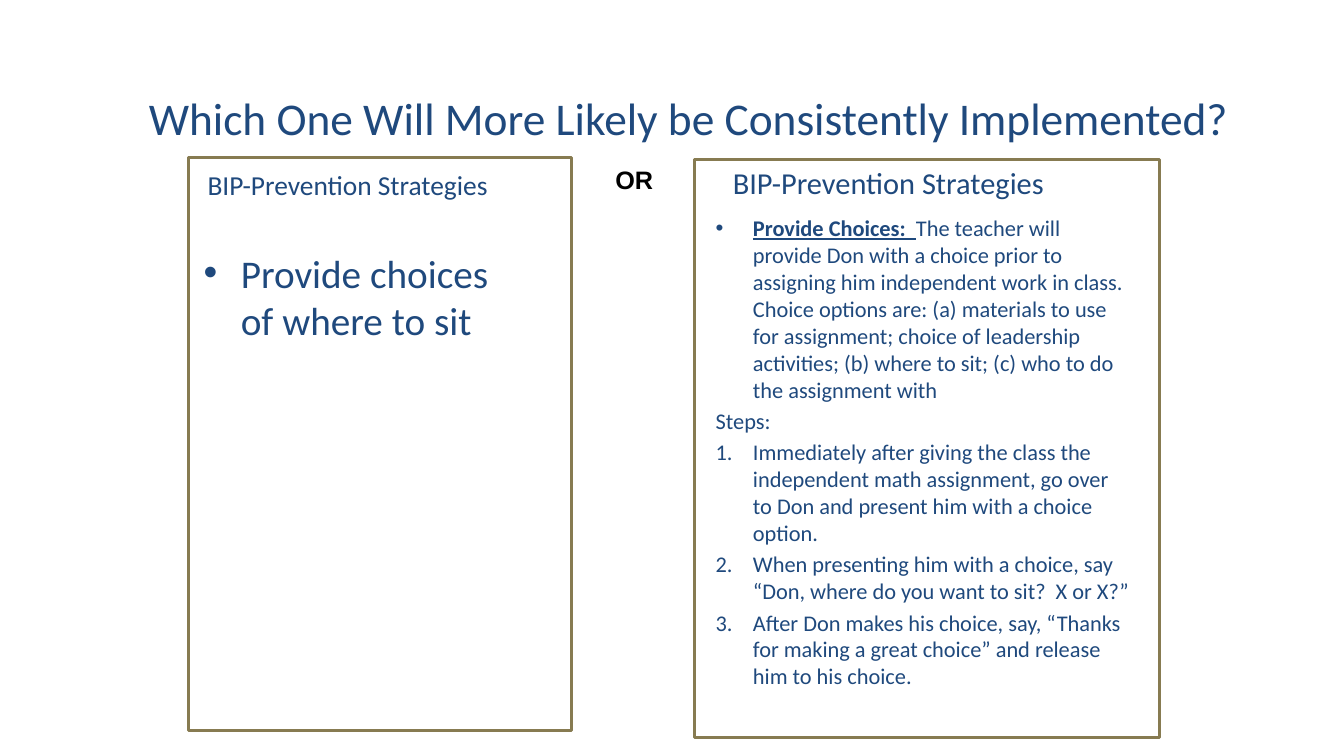
"""Build a slide comparing a vague and a detailed prevention strategy."""
from dataclasses import dataclass

from lxml.etree import SubElement
from pptx import Presentation
from pptx.dml.color import RGBColor as Color
from pptx.enum.shapes import MSO_SHAPE as Shape
from pptx.enum.text import MSO_ANCHOR as Anchor, PP_ALIGN as Align
from pptx.oxml.ns import qn
from pptx.util import Inches, Pt


@dataclass(frozen=True)
class Theme:
    """Colours, fonts and type sizes of the slide."""
    navy: Color = Color(0x1F, 0x49, 0x7D)
    black: Color = Color(0, 0, 0)
    frame: Color = Color(0x87, 0x7B, 0x51)
    body_font: str = "Calibri"
    label_font: str = "Arial"
    title_size: float = 32.4
    short_size: float = 28
    detail_size: float = 16
    short_heading_size: float = 19.6
    detail_heading_size: float = 21.7
    label_size: float = 18
    frame_width: float = 2
    indent: float = 0.37
    space_ratio: float = 0.2


class SlideBuilder:
    """Draws styled elements on one slide."""

    def __init__(self, slide, theme):
        """Keep the slide and its theme."""
        self.slide = slide
        self.theme = theme

    def frame(self, *box):
        """Draw an unfilled outlined rectangle."""
        shape = self.slide.shapes.add_shape(Shape.RECTANGLE, *map(Inches, box))
        shape.shadow.inherit = False
        shape.fill.background()
        shape.line.color.rgb = self.theme.frame
        shape.line.width = Pt(self.theme.frame_width)

    def text_frame(self, box, anchor=Anchor.TOP):
        """Add an empty wrapping text box and return its text frame."""
        frame = self.slide.shapes.add_textbox(*map(Inches, box)).text_frame
        frame.word_wrap = True
        frame.vertical_anchor = anchor
        return frame

    def run(self, paragraph, text, size, color=None, font=None, bold=False, underline=False):
        """Append one styled run."""
        run = paragraph.add_run()
        run.text = text
        run.font.name = font or self.theme.body_font
        run.font.size = Pt(size)
        run.font.color.rgb = color or self.theme.navy
        run.font.bold = bold
        run.font.underline = underline

    def line(self, box, text, size, align=Align.LEFT, anchor=Anchor.TOP, **style):
        """Add a text box with a single paragraph."""
        paragraph = self.text_frame(box, anchor).paragraphs[0]
        paragraph.alignment = align
        self.run(paragraph, text, size, **style)

    def marker(self, paragraph, kind):
        """Set the hanging indent and the bullet or number."""
        properties = paragraph._p.get_or_add_pPr()
        indent = Inches(self.theme.indent)
        properties.set("marL", str(indent))
        properties.set("indent", str(-indent))
        if kind == "bullet":
            SubElement(properties, qn("a:buFont"), typeface=self.theme.label_font)
            SubElement(properties, qn("a:buChar"), char="•")
        elif kind == "number":
            SubElement(properties, qn("a:buAutoNum"), type="arabicPeriod")
        else:
            SubElement(properties, qn("a:buNone"))

    def listing(self, box, size, items):
        """Add a list of (marker kind, bold lead, text) items."""
        frame = self.text_frame(box)
        for index, (kind, lead, text) in enumerate(items):
            paragraph = frame.add_paragraph() if index else frame.paragraphs[0]
            paragraph.space_before = Pt(size * self.theme.space_ratio)
            self.marker(paragraph, kind)
            if lead:
                self.run(paragraph, lead, size, bold=True, underline=True)
            self.run(paragraph, text, size)


SHORT_STRATEGY = [("bullet", "", "Provide choices of where to sit")]
DETAILED_STRATEGY = [
    ("bullet", "Provide Choices:  ",
     "The teacher will provide Don with a choice prior to assigning him independent "
     "work in class.  Choice options are: (a) materials to use for assignment; choice of "
     "leadership activities; (b) where to sit; (c) who to do the assignment with"),
    ("plain", "", "Steps:"),
    ("number", "", "Immediately after giving the class the independent math assignment, "
     "go over to Don and present him with a choice option."),
    ("number", "", "When presenting him with a choice, say “Don, where do you want to "
     "sit?  X or X?”"),
    ("number", "", "After Don makes his choice, say, “Thanks for making a great choice” "
     "and release him to his choice."),
]


def main():
    """Build and save the presentation."""
    theme = Theme()
    presentation = Presentation()
    presentation.slide_width = Inches(13.33)
    presentation.slide_height = Inches(7.5)
    slide = presentation.slides.add_slide(presentation.slide_layouts[6])
    builder = SlideBuilder(slide, theme)

    builder.line((0.83, 0.68, 12, 0.97),
                 "Which One Will More Likely be Consistently Implemented?",
                 theme.title_size, Align.CENTER, Anchor.MIDDLE)
    builder.listing((1.92, 2.42, 3.25, 4.3), theme.short_size, SHORT_STRATEGY)
    builder.listing((7, 2.08, 4.33, 4.92), theme.detail_size, DETAILED_STRATEGY)
    heading = "BIP-Prevention Strategies"
    builder.line((1.96, 1.62, 3.42, 0.7), heading, theme.short_heading_size)
    builder.line((7.17, 1.58, 4, 0.7), heading, theme.detail_heading_size)
    builder.line((5.75, 1.58, 1.08, 0.4), "OR", theme.label_size, Align.CENTER,
                 color=theme.black, font=theme.label_font, bold=True)
    builder.frame(1.87, 1.56, 3.8, 5.69)
    builder.frame(6.89, 1.58, 4.61, 5.74)
    presentation.save("out.pptx")


if __name__ == "__main__":
    main()
